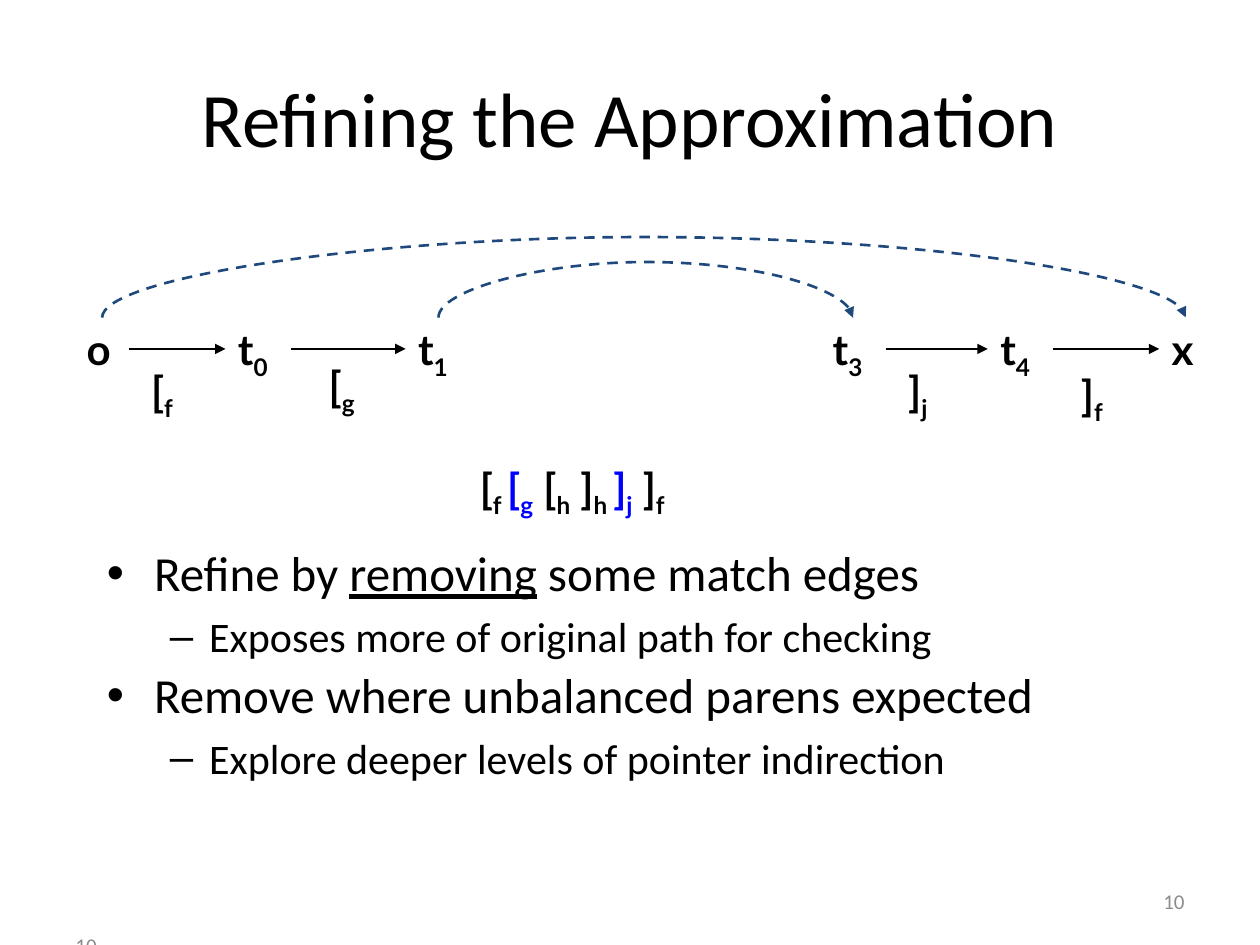
from dataclasses import dataclass

from lxml import etree
from pptx import Presentation
from pptx import util as u
from pptx.dml.color import RGBColor
from pptx.enum import dml, shapes, text
from pptx.oxml.ns import qn

BLACK, BLUE, NAVY, GRAY = "000000", "0000FF", "1F497D", "8C8C8C"
ROW, MID = 181.4, 199.4


@dataclass
class Bit:
    text: str
    low: bool = False
    hue: str = BLACK
    under: bool = False


@dataclass
class Label:
    left: float
    top: float
    width: float
    bits: list[Bit]

    @property
    def right(self) -> float:
        return self.left + self.width


@dataclass
class Point:
    bits: list[Bit]
    size: float
    margin: float
    hang: float
    mark: str
    space: float | None = None


@dataclass
class Arc:
    left: float
    top: float
    span: float
    turn: int
    flip: bool
    ratio: int


def paint(color, hue: str) -> None:
    color.rgb = RGBColor.from_string(hue)


def add_box(slide, left: float, top: float, width: float, height: float):
    box = slide.shapes.add_textbox(u.Pt(left), u.Pt(top), u.Pt(width), u.Pt(height))
    box.text_frame.word_wrap = True
    return box.text_frame


def add_runs(para, bits: list[Bit]) -> None:
    for bit in bits:
        run = para.add_run()
        run.text = bit.text
        paint(run.font.color, bit.hue)
        if bit.under:
            run.font.underline = True
        if bit.low:
            run._r.get_or_add_rPr().set("baseline", "-25000")


def add_line(slide, words: str, place: tuple, size: float, hue: str, align) -> None:
    frame = add_box(slide, *place)
    frame.vertical_anchor = text.MSO_ANCHOR.MIDDLE
    para = frame.paragraphs[0]
    para.alignment = align
    para.font.size, para.font.name = u.Pt(size), "Calibri"
    add_runs(para, [Bit(words, hue=hue)])


def add_label(slide, label: Label) -> None:
    frame = add_box(slide, label.left, label.top, label.width, 36)
    frame.word_wrap = False
    frame.auto_size = text.MSO_AUTO_SIZE.SHAPE_TO_FIT_TEXT
    para = frame.paragraphs[0]
    para.font.size, para.font.name, para.font.bold = u.Pt(24), "Lato", True
    add_runs(para, label.bits)


def add_points(slide, points: list[Point]) -> None:
    frame = add_box(slide, 54, 310.3, 612, 213)
    for rank, point in enumerate(points):
        para = frame.add_paragraph() if rank else frame.paragraphs[0]
        para.font.size, para.font.name = u.Pt(point.size), "Calibri"
        if point.space:
            para.line_spacing = point.space
        props = para._p.get_or_add_pPr()
        props.set("marL", str(u.Pt(point.margin)))
        props.set("indent", str(-u.Pt(point.hang)))
        gap = etree.Element(qn("a:spcBef"))
        etree.SubElement(gap, qn("a:spcPct")).set("val", "20000")
        face = etree.Element(qn("a:buFont"), typeface="Arial")
        mark = etree.Element(qn("a:buChar"), char=point.mark)
        spot = 1 if point.space else 0
        for step, node in enumerate((gap, face, mark)):
            props.insert(spot + step, node)
        add_runs(para, point.bits)


def add_link(slide, kind, start: tuple, end: tuple, hue: str, width: float, dash=None):
    link = slide.shapes.add_connector(kind, *map(u.Pt, start + end))
    paint(link.line.color, hue)
    link.line.width = u.Pt(width)
    if dash:
        link.line.dash_style = dash
    props = link._element.spPr
    etree.SubElement(props.find(qn("a:ln")), qn("a:tailEnd")).set("type", "triangle")
    etree.SubElement(props, qn("a:effectLst"))
    return props


def add_arc(slide, arc: Arc) -> None:
    low, high = arc.top, arc.top + arc.span
    if arc.flip:
        low, high = high, low
    props = add_link(slide, shapes.MSO_CONNECTOR.CURVE, (arc.left, low),
                     (arc.left + 0.125, high), NAVY, 1.5, dml.MSO_LINE.DASH)
    props.find(qn("a:xfrm")).set("rot", str(arc.turn * 60000))
    guide = etree.SubElement(props.find(qn("a:prstGeom")).find(qn("a:avLst")), qn("a:gd"))
    guide.set("name", "adj1")
    guide.set("fmla", f"val {arc.ratio * 100000}")


def pair(base: str, low: str, hue: str = BLACK) -> list[Bit]:
    return [Bit(base, hue=hue), Bit(low, True, hue)]


def main() -> None:
    deck = Presentation()
    deck.slide_width, deck.slide_height = u.Pt(720), u.Pt(540)
    slide = deck.slides.add_slide(deck.slide_layouts[6])
    align = text.PP_ALIGN

    add_line(slide, "10", (36, 525.6, 168, 28.8), 12, GRAY, align.LEFT)
    add_line(slide, "Refining the Approximation", (36, 21.6, 648, 90), 44, BLACK, align.CENTER)
    add_line(slide, "10", (516, 500.4, 168, 28.8), 12, GRAY, align.RIGHT)

    add_points(slide, [
        Point([Bit("Refine by "), Bit("removing", under=True), Bit(" some match edges")],
              28, 27, 27, "•", 0.9),
        Point([Bit("Exposes more of original path for checking")], 24, 58.5, 22.5, "–"),
        Point([Bit("Remove where unbalanced parens expected")], 28, 27, 27, "•", 0.9),
        Point([Bit("Explore deeper levels of pointer indirection")], 24, 58.5, 22.5, "–"),
    ])

    chains = [
        [Label(42.5, ROW, 31, [Bit("o")]),
         Label(128.9, ROW, 37.4, pair("t", "0")),
         Label(231.8, ROW, 37.4, pair("t", "1"))],
        [Label(468.7, ROW, 37.4, pair("t", "3")),
         Label(564.5, ROW, 37.4, pair("t", "4")),
         Label(662.4, ROW, 30.2, [Bit("x")])],
    ]
    for chain in chains:
        for node in chain:
            add_label(slide, node)
        for node, after in zip(chain, chain[1:]):
            add_link(slide, shapes.MSO_CONNECTOR.STRAIGHT, (node.right, MID),
                     (after.left, MID), BLACK, 0.75)

    formula = (pair("[", "f ") + pair("[", "g", BLUE) + pair(" [", "h")
               + pair(" ]", "h ") + pair("]", "j", BLUE) + pair(" ]", "f"))
    for label in (
        Label(79.2, 205.2, 32.4, pair("[", "f")),
        Label(180.7, 202.3, 36.7, pair("[", "g")),
        Label(511.9, 205.2, 31, pair("]", "j")),
        Label(610.6, 207.4, 32.4, pair("]", "f")),
        Label(267.1, 260.6, 176.4, formula),
    ):
        add_label(slide, label)

    add_arc(slide, Arc(367.9, -128.2, 619.2, 270, False, 406))
    add_arc(slide, Arc(368.9, 63.1, 236.9, 90, True, -280))
    deck.save("out.pptx")


if __name__ == "__main__":
    main()
